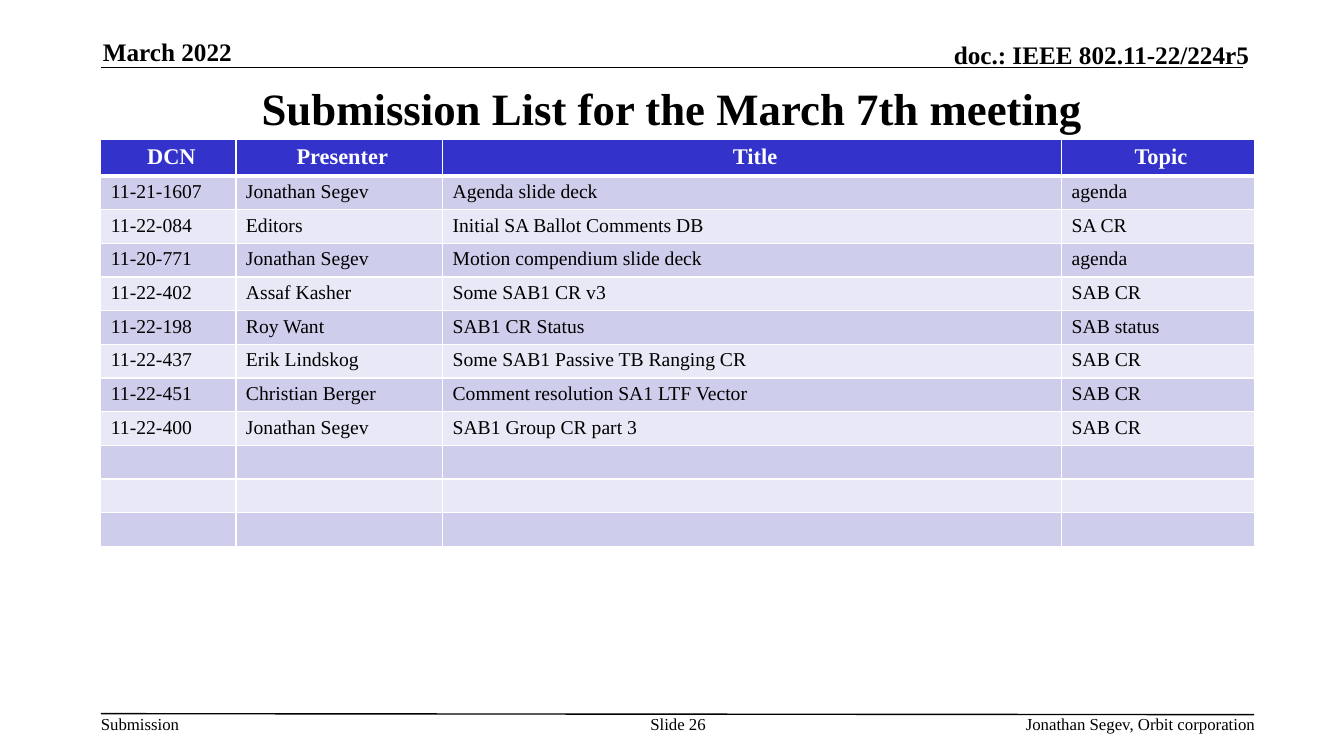
from lxml import etree
from pptx import Presentation
from pptx.dml.color import RGBColor
from pptx.enum.shapes import MSO_CONNECTOR
from pptx.enum.text import MSO_ANCHOR, PP_ALIGN
from pptx.oxml.ns import qn
from pptx.util import Inches, Pt

LEFT, CENTER, RIGHT = PP_ALIGN.LEFT, PP_ALIGN.CENTER, PP_ALIGN.RIGHT
TOP, MIDDLE, BOTTOM = MSO_ANCHOR.TOP, MSO_ANCHOR.MIDDLE, MSO_ANCHOR.BOTTOM
STRAIGHT = MSO_CONNECTOR.STRAIGHT

# Content
FONT = "Times New Roman"
COLORS = {"text": "000000", "white": "FFFFFF", "header": "3333CC",
          "odd": "CECEEC", "even": "E8E8F6"}
TITLE = "Submission List for the March 7th meeting"
HEADINGS = ("DCN", "Presenter", "Title", "Topic")
SUBMISSIONS = [
    ("11-21-1607", "Jonathan Segev", "Agenda slide deck", "agenda"),
    ("11-22-084", "Editors", "Initial SA Ballot Comments DB", "SA CR"),
    ("11-20-771", "Jonathan Segev", "Motion compendium slide deck", "agenda"),
    ("11-22-402", "Assaf Kasher", "Some SAB1 CR v3", "SAB CR"),
    ("11-22-198", "Roy Want", "SAB1 CR Status", "SAB status"),
    ("11-22-437", "Erik Lindskog", "Some SAB1 Passive TB Ranging CR", "SAB CR"),
    ("11-22-451", "Christian Berger", "Comment resolution SA1 LTF Vector", "SAB CR"),
    ("11-22-400", "Jonathan Segev", "SAB1 Group CR part 3", "SAB CR"),
]
EMPTY_ROWS = 3
COLUMN_WIDTHS = (1.34, 2.05, 6.14, 1.91)
HEADER_HEIGHT, ROW_HEIGHT = 0.34, 0.31

# text, (left, top, width, height), size, bold, alignment, anchor, wrap
LABELS = [
    ("March 2022", (1.02, 0.36, 2.73, 0.3), 18, True, LEFT, BOTTOM, True),
    ("doc.: IEEE 802.11-22/224r5", (7.29, 0.39, 5.1, 0.3), 18, True, RIGHT, BOTTOM, True),
    ("Submission", (1, 7.08, 0.79, 0.2), 12, False, LEFT, TOP, False),
    ("Slide 26", (6.34, 7.08, 0.77, 0.4), 12, False, CENTER, TOP, True),
    ("Jonathan Segev, Orbit corporation", (7.81, 7.08, 4.64, 0.2), 12, False, RIGHT, TOP, True),
]
RULES = [(1, 0.67, 12.33, 0.67), (1, 7.08, 12.44, 7.09)]


def color(name):
    return RGBColor.from_string(COLORS[name])


def write(paragraph, text, size, bold, alignment, color_name="text"):
    paragraph.alignment = alignment
    run = paragraph.add_run()
    run.text = text
    run.font.name = FONT
    run.font.size = Pt(size)
    run.font.bold = bold
    run.font.color.rgb = color(color_name)


def set_empty_size(paragraph, size):
    end = etree.SubElement(paragraph._p, qn("a:endParaRPr"), sz=str(size * 100))
    etree.SubElement(end, qn("a:latin"), typeface=FONT)


def add_borders(cell, top, bottom):
    properties = cell._tc.get_or_add_tcPr()
    for side, width in (("L", 1), ("R", 1), ("T", top), ("B", bottom)):
        line = etree.SubElement(properties, qn(f"a:ln{side}"), w=str(Pt(width)))
        fill = etree.SubElement(line, qn("a:solidFill"))
        etree.SubElement(fill, qn("a:srgbClr"), val=COLORS["white"])


presentation = Presentation()
presentation.slide_width = Inches(13.33)
presentation.slide_height = Inches(7.5)
slide = presentation.slides.add_slide(presentation.slide_layouts[5])

# Rules under the header and above the footer
for x1, y1, x2, y2 in RULES:
    rule = slide.shapes.add_connector(STRAIGHT, Inches(x1), Inches(y1), Inches(x2), Inches(y2))
    rule.line.color.rgb = color("text")
    rule.line.width = Pt(1)
    etree.SubElement(rule._element.spPr, qn("a:effectLst"))

# Title
title = slide.shapes.title
title.left, title.top = Inches(1), Inches(0.75)
title.width, title.height = Inches(11.33), Inches(0.64)
title.text_frame.vertical_anchor = MIDDLE
write(title.text_frame.paragraphs[0], TITLE, 32, True, CENTER)

# Header and footer labels
for text, box, size, bold, alignment, anchor, wrap in LABELS:
    label = slide.shapes.add_textbox(*(Inches(length) for length in box))
    frame = label.text_frame
    frame.margin_left = frame.margin_top = frame.margin_right = frame.margin_bottom = 0
    frame.word_wrap = wrap
    frame.vertical_anchor = anchor
    write(frame.paragraphs[0], text, size, bold, alignment)

# Submission table
rows = [HEADINGS] + SUBMISSIONS + [("",) * len(HEADINGS)] * EMPTY_ROWS
table_height = HEADER_HEIGHT + ROW_HEIGHT * (len(rows) - 1)
table = slide.shapes.add_table(len(rows), len(HEADINGS), Inches(1), Inches(1.38),
                               Inches(sum(COLUMN_WIDTHS)), Inches(table_height)).table
for column, width in zip(table.columns, COLUMN_WIDTHS):
    column.width = Inches(width)
for row_index, row in enumerate(rows):
    is_header = row_index == 0
    table.rows[row_index].height = Inches(HEADER_HEIGHT if is_header else ROW_HEIGHT)
    fill_name = "header" if is_header else ("even", "odd")[row_index % 2]
    for column_index, text in enumerate(row):
        cell = table.cell(row_index, column_index)
        cell.margin_left = Inches(0.1)
        cell.margin_right = Inches(0.04 if is_header else 0.1)
        cell.margin_top = cell.margin_bottom = Inches(0.05)
        add_borders(cell, 3 if row_index == 1 else 1, 3 if is_header else 1)
        cell.fill.solid()
        cell.fill.fore_color.rgb = color(fill_name)
        paragraph = cell.text_frame.paragraphs[0]
        if is_header:
            write(paragraph, text, 16, True, CENTER, "white")
        elif text:
            write(paragraph, text, 14, False, LEFT)
        else:
            set_empty_size(paragraph, 14)

presentation.save("out.pptx")
